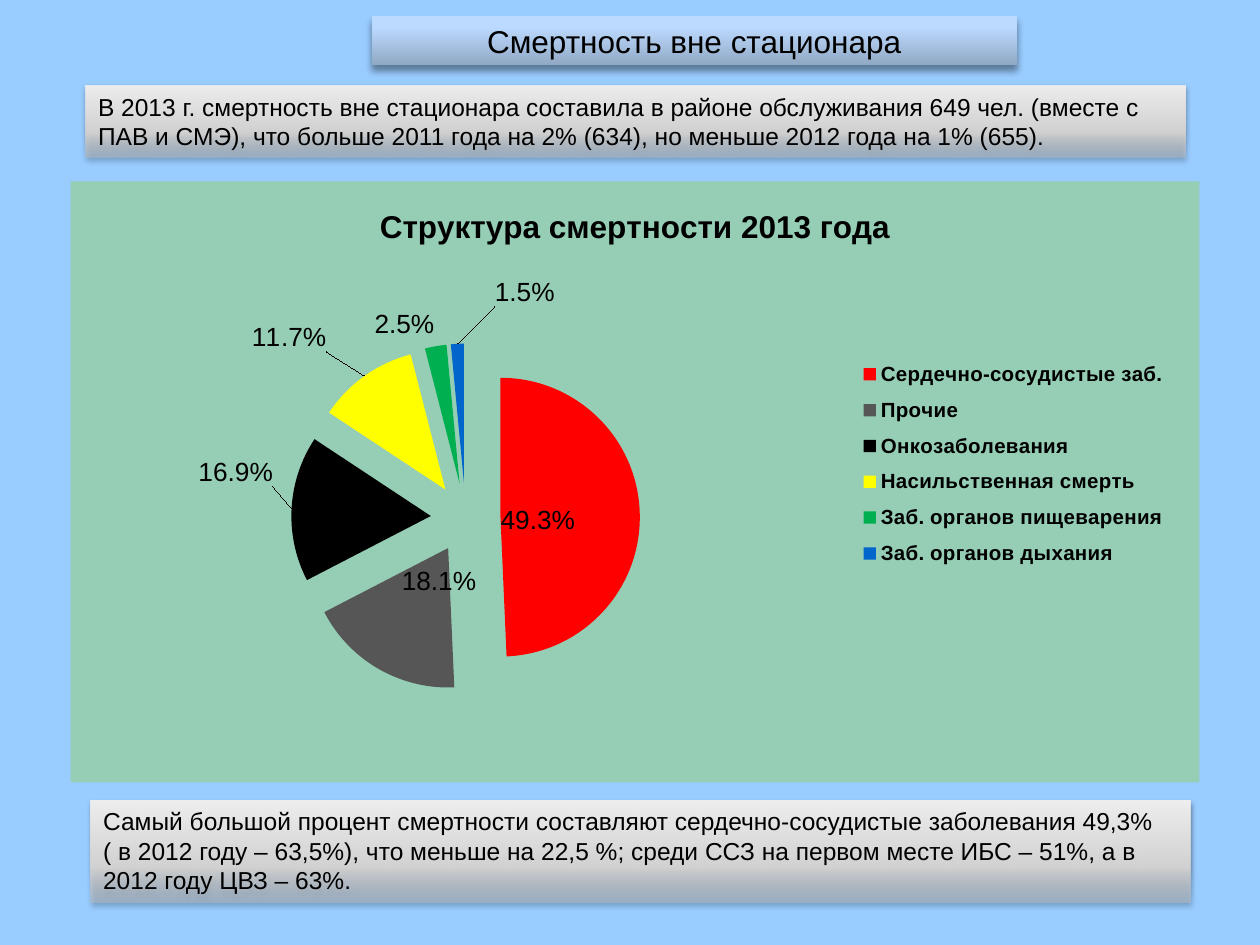
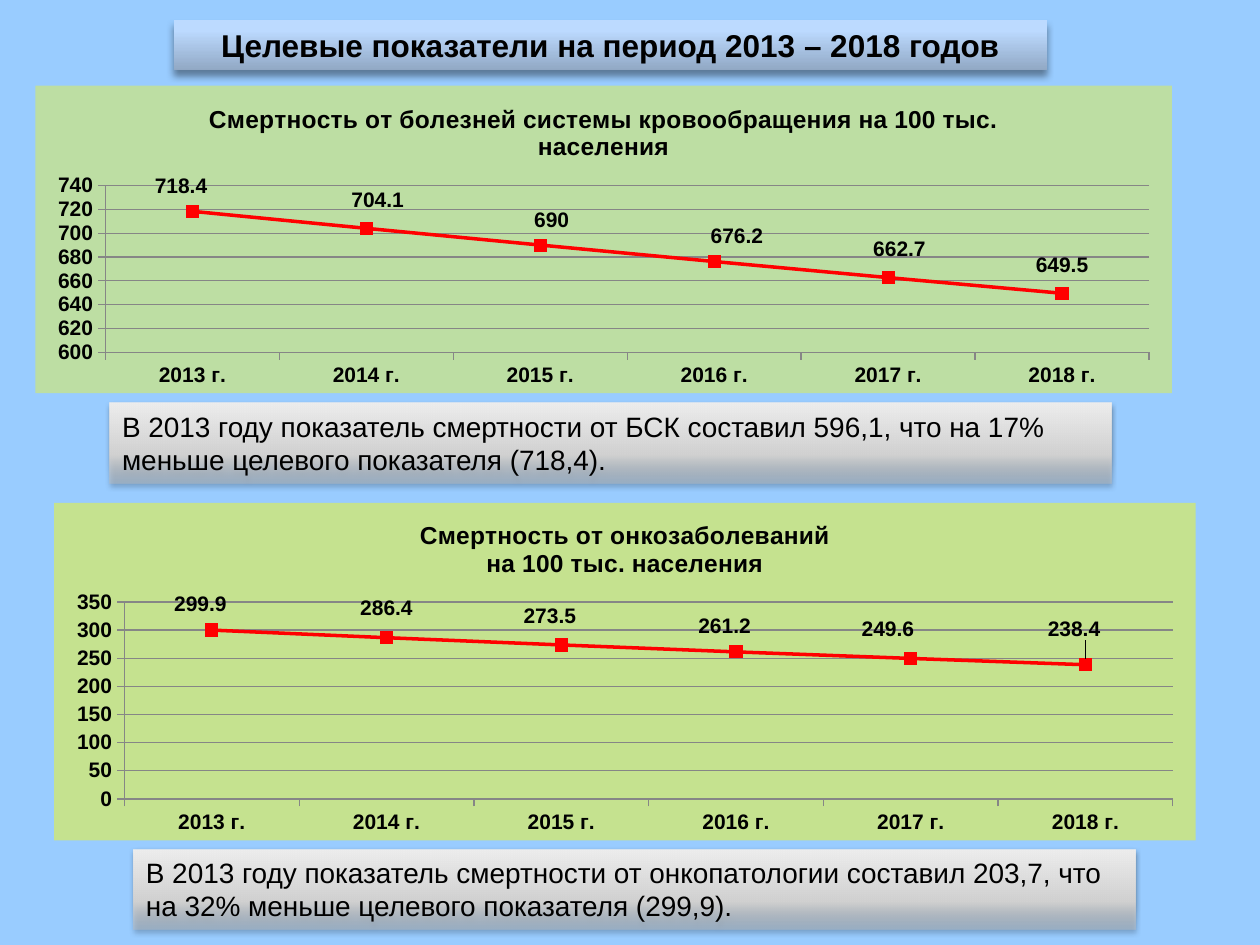
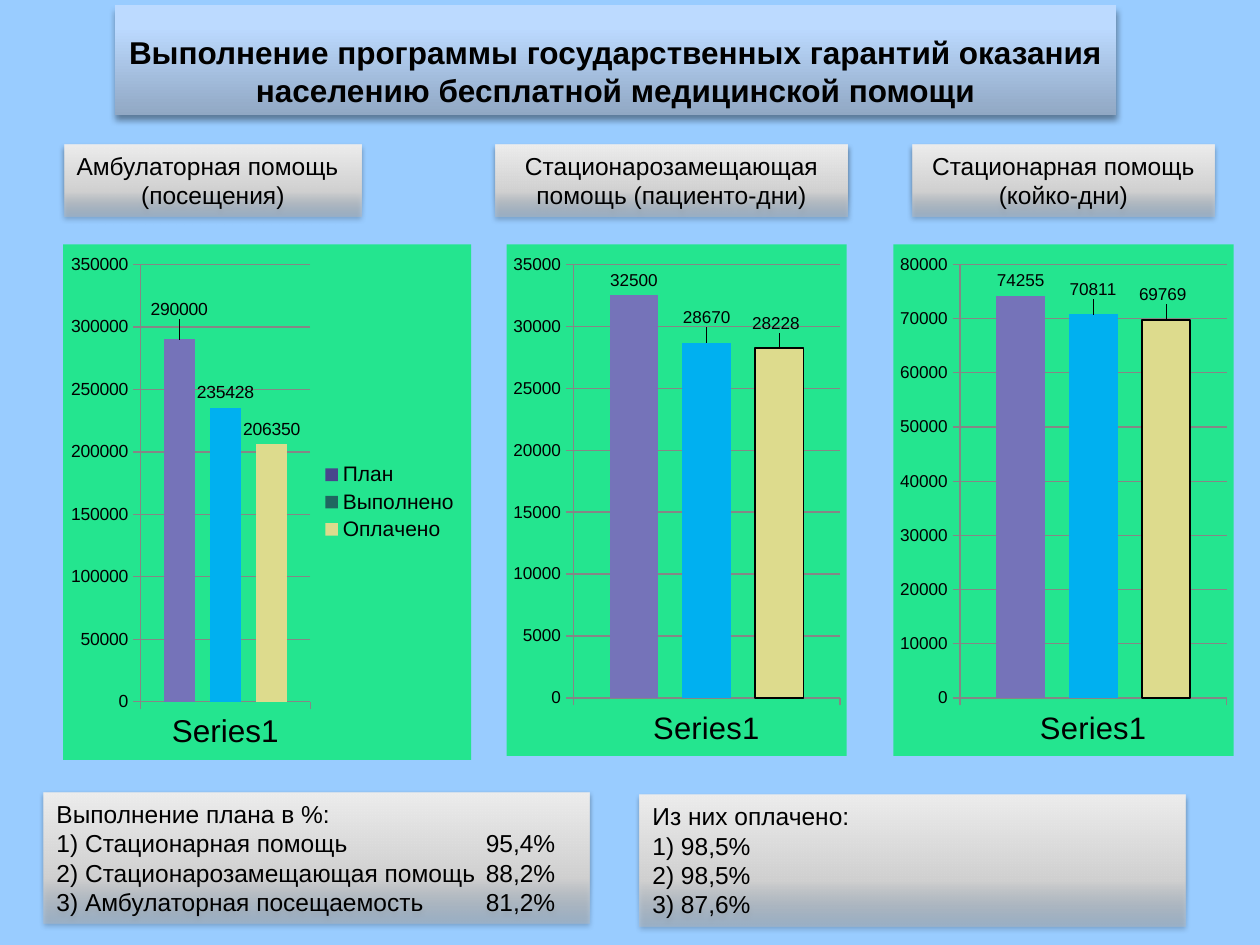
from dataclasses import dataclass

from lxml.etree import SubElement
from pptx import Presentation
from pptx.chart.data import CategoryChartData
from pptx.dml.color import RGBColor
from pptx.enum.chart import (XL_CHART_TYPE, XL_LABEL_POSITION, XL_LEGEND_POSITION,
                             XL_MARKER_STYLE, XL_TICK_MARK)
from pptx.enum.shapes import MSO_SHAPE
from pptx.enum.text import MSO_ANCHOR, PP_ALIGN
from pptx.oxml.ns import qn
from pptx.util import Inches, Pt


@dataclass(frozen=True)
class Theme:
    font: str = "Arial"
    background: str = "99CCFF"
    text: str = "000000"
    axis: str = "868686"
    trend: str = "FF0000"
    heading: int = 18
    body: int = 14
    note: int = 16
    axis_size: int = 12
    heading_stops: tuple = ((0, "91A8C4", 100), (80, "BCDAFF", 100), (100, "BEDBFF", 100))
    panel_stops: tuple = ((0, "BDBDBD", 46), (35, "D1D1D1", 100), (100, "EEEEEE", 100))
    heading_shadow: tuple = (40, 4, 3)
    panel_shadow: tuple = (38, 3.1, 1.6)
    causes: tuple = ("FF0000", "565656", "000000", "FFFF00", "00B050", "0066CC")
    bars: tuple = ("7573B9", "00B0F0", "DDDB8D")
    bar_keys: tuple = ("48468C", "1F6660", "DDDB8D")


def rgb(value):
    return RGBColor.from_string(value)


def add_colour(parent, value, alpha):
    colour = SubElement(parent, qn("a:srgbClr"), val=value)
    if alpha < 100:
        SubElement(colour, qn("a:alpha"), val=str(alpha * 1000))


def style_font(font, theme, size, bold=False):
    font.name = theme.font
    font.size = Pt(size)
    font.bold = bold
    font.color.rgb = rgb(theme.text)


def write(paragraph, text, *, theme, size, bold=False, align=PP_ALIGN.LEFT,
          numbered=False, tab=None):
    paragraph.alignment = align
    properties = paragraph._p.get_or_add_pPr()
    if numbered:
        SubElement(properties, qn("a:buAutoNum"), type="arabicParenR")
    if tab:
        stops = SubElement(properties, qn("a:tabLst"))
        SubElement(stops, qn("a:tab"), pos=str(Inches(tab)), algn="r")
    run = paragraph.add_run()
    run.text = text
    style_font(run.font, theme, size, bold)


def manual_layout(x, y, previous, w=None, h=None, absolute=False, inner=False):
    layout = previous.makeelement(qn("c:layout"))
    manual = SubElement(layout, qn("c:manualLayout"))
    if inner:
        SubElement(manual, qn("c:layoutTarget"), val="inner")
    if absolute:
        SubElement(manual, qn("c:xMode"), val="edge")
        SubElement(manual, qn("c:yMode"), val="edge")
    for key, value in (("x", x), ("y", y), ("w", w), ("h", h)):
        if value is not None:
            SubElement(manual, qn(f"c:{key}"), val=str(value))
    return layout


class Deck:
    def __init__(self, theme):
        self.theme = theme
        self.presentation = Presentation()
        self.presentation.slide_width = Inches(10)
        self.presentation.slide_height = Inches(7.5)
        self.slide = None

    def new_slide(self):
        self.slide = self.presentation.slides.add_slide(self.presentation.slide_layouts[6])
        fill = self.slide.background.fill
        fill.solid()
        fill.fore_color.rgb = rgb(self.theme.background)

    def box(self, place, lines, stops, shadow, anchor, **style):
        shape = self.slide.shapes.add_shape(MSO_SHAPE.RECTANGLE, *map(Inches, place))
        shape.line.fill.background()
        shape.fill.gradient()
        shape.fill.gradient_angle = 90
        properties = shape._element.spPr
        stop_list = properties.find(f".//{qn('a:gsLst')}")
        for default in list(stop_list):
            stop_list.remove(default)
        for position, colour, alpha in stops:
            stop = SubElement(stop_list, qn("a:gs"), pos=str(position * 1000))
            add_colour(stop, colour, alpha)
        shape.shadow.inherit = False
        alpha, blur, distance = shadow
        outer = SubElement(properties.find(qn("a:effectLst")), qn("a:outerShdw"),
                           blurRad=str(Pt(blur)), dist=str(Pt(distance)), dir="5400000")
        add_colour(outer, "000000", alpha)
        frame = shape.text_frame
        frame.word_wrap = True
        frame.vertical_anchor = anchor
        for index, line in enumerate(lines):
            text, options = (line, {}) if isinstance(line, str) else line
            paragraph = frame.add_paragraph() if index else frame.paragraphs[0]
            write(paragraph, text, **{"theme": self.theme, **style, **options})

    def heading(self, place, text, bold=True):
        self.box(place, [text], self.theme.heading_stops, self.theme.heading_shadow,
                 MSO_ANCHOR.BOTTOM, size=self.theme.heading, bold=bold, align=PP_ALIGN.CENTER)

    def panel(self, place, *lines, size=None, align=PP_ALIGN.LEFT):
        self.box(place, lines, self.theme.panel_stops, self.theme.panel_shadow,
                 MSO_ANCHOR.TOP, size=size or self.theme.body, align=align)

    def chart(self, kind, place, categories, series, fill, size, title=None, title_size=18):
        data = CategoryChartData()
        data.categories = categories
        for name, values in series:
            data.add_series(name, values)
        chart = self.slide.shapes.add_chart(kind, *map(Inches, place), data).chart
        style_font(chart.font, self.theme, size)
        chart.has_legend = False
        chart.has_title = title is not None
        if title:
            frame = chart.chart_title.text_frame
            for index, line in enumerate(title.split("\n")):
                paragraph = frame.add_paragraph() if index else frame.paragraphs[0]
                write(paragraph, line, theme=self.theme, size=title_size, bold=True,
                      align=PP_ALIGN.CENTER)
            chart.chart_title.include_in_layout = False
        body = chart.element.find(qn("c:chart"))
        area = body.makeelement(qn("c:spPr"))
        add_colour(SubElement(area, qn("a:solidFill")), *fill)
        SubElement(SubElement(area, qn("a:ln")), qn("a:noFill"))
        body.addnext(area)
        return chart

    def legend(self, chart, size, bold=False):
        chart.has_legend = True
        chart.legend.position = XL_LEGEND_POSITION.RIGHT
        chart.legend.include_in_layout = False
        style_font(chart.legend.font, self.theme, size, bold)

    def axes(self, chart, category_size, value_size, bold=False):
        for axis, size in ((chart.category_axis, category_size), (chart.value_axis, value_size)):
            axis.major_tick_mark = XL_TICK_MARK.OUTSIDE
            axis.minor_tick_mark = XL_TICK_MARK.NONE
            axis.format.line.color.rgb = rgb(self.theme.axis)
            style_font(axis.tick_labels.font, self.theme, size, bold)
        chart.value_axis.has_major_gridlines = True
        chart.value_axis.major_gridlines.format.line.color.rgb = rgb(self.theme.axis)

    def labels(self, series, size, position, offsets, bold=False, percent=False):
        labels = series.data_labels
        labels.show_value = not percent
        labels.show_percentage = percent
        labels.position = position
        if percent:
            labels.number_format = "0.0%"
            labels.number_format_is_linked = False
        style_font(labels.font, self.theme, size, bold)
        for index, offset in enumerate(offsets):
            if offset == (0, 0):
                continue
            label = series.points[index].data_label
            label.position = position
            style_font(label.font, self.theme, size, bold)
            element = label._dLbl
            element.find(qn("c:showVal")).set("val", str(int(not percent)))
            element.find(qn("c:showPercent")).set("val", str(int(percent)))
            idx = element.find(qn("c:idx"))
            idx.addnext(manual_layout(*offset, idx))

    def pie(self, place, title, shares, offsets):
        chart = self.chart(XL_CHART_TYPE.PIE, place, list(shares),
                           [(title, list(shares.values()))], ("92D050", 42), 15, title)
        self.legend(chart, 11.7, True)
        side = chart.legend._element.find(qn("c:legendPos"))
        side.addnext(manual_layout(0.69, 0.28, side, 0.29, 0.38, absolute=True))
        plot = chart.element.find(f".//{qn('c:plotArea')}")
        for automatic in plot.findall(qn("c:layout")):
            plot.remove(automatic)
        plot.insert(0, manual_layout(0.06, 0.27, plot, 0.58, 0.58, absolute=True, inner=True))
        series = chart.plots[0].series[0]
        for index, colour in enumerate(self.theme.causes):
            fill = series.points[index].format.fill
            fill.solid()
            fill.fore_color.rgb = rgb(colour)
        self.labels(series, 15, XL_LABEL_POSITION.OUTSIDE_END, offsets, percent=True)
        explosion = series._element.makeelement(qn("c:explosion"), val="25")
        series._element.find(qn("c:dPt")).addprevious(explosion)

    def trend(self, place, title, years, values, alpha, offsets):
        chart = self.chart(XL_CHART_TYPE.LINE_MARKERS, place, years, [("Series 1", values)],
                           ("FFFF00", alpha), 10, title, self.theme.body)
        self.axes(chart, self.theme.axis_size, self.theme.axis_size, True)
        chart.plots[0].vary_by_categories = False
        series = chart.plots[0].series[0]
        series.smooth = False
        series.format.line.color.rgb = rgb(self.theme.trend)
        series.format.line.width = Pt(2)
        series.marker.style = XL_MARKER_STYLE.SQUARE
        series.marker.size = 7
        series.marker.format.fill.solid()
        series.marker.format.fill.fore_color.rgb = rgb(self.theme.trend)
        series.marker.format.line.color.rgb = rgb(self.theme.trend)
        self.labels(series, self.theme.axis_size, XL_LABEL_POSITION.ABOVE, offsets, True)

    def columns(self, place, names, values, offsets, size, value_size, keyed):
        chart = self.chart(XL_CHART_TYPE.COLUMN_CLUSTERED, place, ["Series1"],
                           [(name, [value]) for name, value in zip(names, values)],
                           ("00EE6C", 76), size)
        self.axes(chart, size, value_size)
        chart.value_axis.minimum_scale = 0
        plot = chart.plots[0]
        plot.vary_by_categories = False
        plot.gap_width = 150
        plot.overlap = -50
        for series, key, bar, offset in zip(plot.series, self.theme.bar_keys,
                                            self.theme.bars, offsets):
            series.format.fill.solid()
            series.format.fill.fore_color.rgb = rgb(key)
            if key != bar:
                fill = series.points[0].format.fill
                fill.solid()
                fill.fore_color.rgb = rgb(bar)
            self.labels(series, value_size, XL_LABEL_POSITION.OUTSIDE_END, [offset])
        if keyed:
            self.legend(chart, 12)
        else:
            paid = plot.series[2].format.line
            paid.color.rgb = rgb(self.theme.text)
            paid.width = Pt(1)


def mortality_slide(deck):
    deck.new_slide()
    deck.heading((2.95, 0.13, 5.12, 0.39), "Смертность вне стационара", bold=False)
    deck.panel((0.72, 6.35, 8.73, 0.81),
               "Самый большой процент смертности составляют сердечно-сосудистые заболевания "
               "49,3%( в 2012 году – 63,5%), что меньше на 22,5 %; среди ССЗ на первом месте "
               "ИБС – 51%, а в 2012 году ЦВЗ – 63%.")
    deck.panel((0.68, 0.68, 8.73, 0.57),
               "В 2013 г. смертность вне стационара составила в районе обслуживания 649 чел. "
               "(вместе с ПАВ и СМЭ), что больше 2011 года на 2% (634), но меньше 2012 года "
               "на 1% (655).")
    shares = {"Сердечно-сосудистые заб.": 49.3, "Прочие": 18.1, "Онкозаболевания": 16.9,
              "Насильственная смерть": 11.7, "Заб. органов пищеварения": 2.5,
              "Заб. органов дыхания": 1.5}
    deck.pie((0.56, 1.44, 8.96, 4.77), "Структура смертности 2013 года", shares,
             [(-0.13, 0.01), (0.09, -0.18), (-0.01, -0.06), (-0.03, -0.03), (0, 0),
              (0.06, -0.05)])


def targets_slide(deck):
    deck.new_slide()
    years = [f"{year} г." for year in range(2013, 2019)]
    deck.panel((1.06, 6.74, 7.95, 0.64),
               "В 2013 году показатель смертности от онкопатологии составил 203,7, что на 32% "
               "меньше целевого показателя (299,9).", size=deck.theme.note)
    deck.trend((0.28, 0.68, 9.02, 2.44),
               "Смертность от болезней системы кровообращения на 100 тыс. населения",
               years, [718.4, 704.1, 690, 676.2, 662.7, 649.5], 36,
               [(-0.01, -0.01), (0.01, -0.02), (0.01, -0.01), (0.02, -0.01),
                (0.01, -0.02), (0, -0.02)])
    deck.trend((0.43, 3.99, 9.06, 2.68),
               "Смертность от онкозаболеваний\nна 100 тыс. населения",
               years, [299.9, 286.4, 273.5, 261.2, 249.6, 238.4], 44,
               [(-0.01, -0.01), (0, -0.02), (-0.01, -0.02), (-0.01, -0.01),
                (-0.02, -0.02), (-0.01, -0.04)])
    deck.heading((1.38, 0.16, 6.93, 0.4), "Целевые показатели на период 2013 – 2018 годов")
    deck.panel((0.87, 3.2, 7.95, 0.64),
               "В 2013 году показатель смертности от БСК составил 596,1, что на 17% меньше "
               "целевого показателя (718,4).", size=deck.theme.note)


def guarantees_slide(deck):
    deck.new_slide()
    deck.heading((0.91, 0.04, 7.95, 0.87),
                 "Выполнение программы государственных гарантий оказания населению "
                 "бесплатной медицинской помощи")
    deck.panel((0.51, 1.15, 2.36, 0.57), "Амбулаторная помощь",
               ("(посещения)", {"align": PP_ALIGN.CENTER}))
    deck.panel((3.93, 1.15, 2.8, 0.57), "Стационарозамещающая помощь (пациенто-дни)",
               align=PP_ALIGN.CENTER)
    deck.panel((7.24, 1.15, 2.4, 0.57), "Стационарная помощь (койко-дни)",
               align=PP_ALIGN.CENTER)
    unnamed = ["Series 1", "Series 2", "Series 3"]
    inpatient_offsets = [(0, 0), (0, -0.02), (-0.01, -0.02)]
    for left, values in ((4.02, [32500, 28670, 28228]), (7.09, [74255, 70811, 69769])):
        deck.columns((left, 1.94, 2.7, 4.06), unnamed, values, inpatient_offsets,
                     17.7, 9.8, keyed=False)
    deck.columns((0.5, 1.94, 3.24, 4.09), ["План", "Выполнено", "Оплачено"],
                 [290000, 235428, 206350], [(0, -0.03), (0, 0), (0, 0)], 18, 10, keyed=True)
    completion = {"Стационарная помощь": "95,4%", "Стационарозамещающая помощь": "88,2%",
                  "Амбулаторная посещаемость": "81,2%"}
    deck.panel((0.35, 6.29, 4.33, 1.04), "Выполнение плана в %:",
               *[(f" {care}\t{share}", {"numbered": True, "tab": 4.1})
                 for care, share in completion.items()])
    deck.panel((5.08, 6.31, 4.33, 1.04), "Из них оплачено:",
               *[(f" {share}", {"numbered": True}) for share in ("98,5%", "98,5%", "87,6%")])


def main():
    deck = Deck(Theme())
    mortality_slide(deck)
    targets_slide(deck)
    guarantees_slide(deck)
    deck.presentation.save("out.pptx")


if __name__ == "__main__":
    main()
